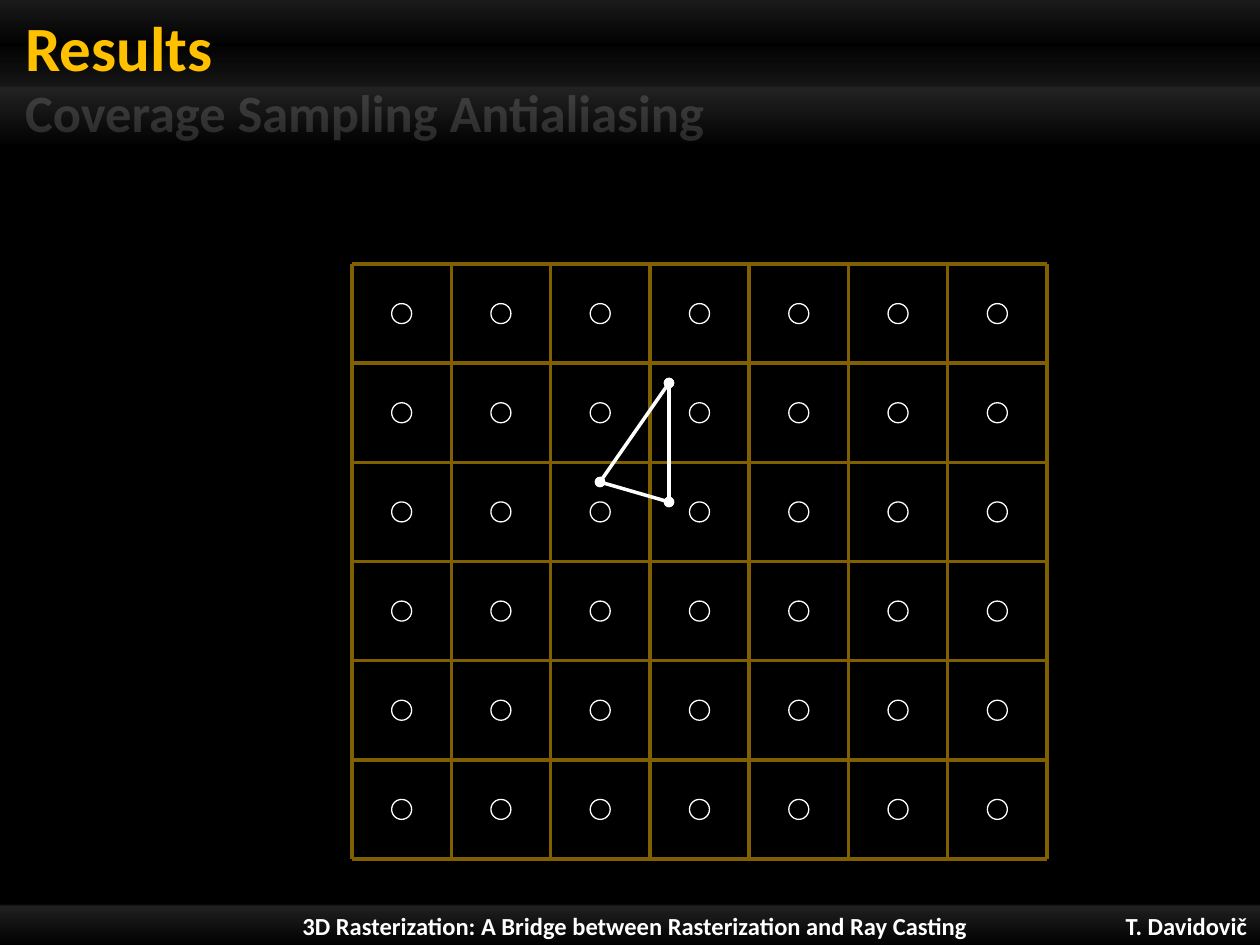
from lxml.etree import SubElement
from pptx import Presentation
from pptx.dml.color import RGBColor
from pptx.enum.shapes import MSO_CONNECTOR, MSO_SHAPE
from pptx.enum.text import MSO_ANCHOR, MSO_AUTO_SIZE, PP_ALIGN
from pptx.oxml.ns import qn
from pptx.util import Pt

WHITE = RGBColor(0xFF, 0xFF, 0xFF)
BLACK = RGBColor(0, 0, 0)
GOLD = RGBColor(0xFF, 0xC0, 0x00)
BROWN = RGBColor(0x80, 0x60, 0x00)
FONT = "Calibri"

# Content: boxes are left, top, width, height in px
TITLE = "Results"
TOPIC = "Coverage Sampling Antialiasing"
FOOTER = [
    ("T. Davidovič", (1027, 906, 233, 39), PP_ALIGN.RIGHT),
    ("3D Rasterization: A Bridge between Rasterization and Ray Casting",
     (176, 904, 918, 43), PP_ALIGN.CENTER),
]
# Bands: box, then stops of white as (position %, opacity %)
BANDS = [
    ((0, 902, 1260, 43), [(5, 0), (10, 8), (11, 13), (100, 0)]),
    ((0, 0, 1260, 144), [(0, 10), (31, 0), (60, 8), (61, 13), (100, 0)]),
]
COLS, ROWS = 7, 6
LEFT, TOP, WIDTH, HEIGHT = 352, 264, 695, 595
DOT = 20
CORNERS = [(669, 383), (600, 482), (669, 502)]


def px(n):
    return round(n * 914400 / 126)


def place(shape, box):
    shape.left, shape.top, shape.width, shape.height = map(px, box)


def write(shape, text, size, color, align, anchor, left=13, right=13):
    frame = shape.text_frame
    frame.auto_size = MSO_AUTO_SIZE.NONE
    frame.word_wrap = True
    frame.vertical_anchor = anchor
    frame.margin_left, frame.margin_right = px(left), px(right)
    frame.margin_top = frame.margin_bottom = 0
    para = frame.paragraphs[0]
    para.alignment = align
    para.space_before = Pt(0)
    run = para.add_run()
    run.text = text
    font = run.font
    font.name, font.size, font.bold = FONT, Pt(size), True
    font.color.rgb = color
    return para, run


def add_line(start, end, color, ends=False):
    line = slide.shapes.add_connector(
        MSO_CONNECTOR.STRAIGHT, *map(px, (*start, *end)))
    line.line.color.rgb = color
    line.line.width = Pt(2)
    if ends:
        for tag in ("a:headEnd", "a:tailEnd"):
            SubElement(line.line._get_or_add_ln(), qn(tag), type="oval")
    SubElement(line._element.spPr, qn("a:effectLst"))


def add_band(box, stops):
    band = slide.shapes.add_shape(MSO_SHAPE.RECTANGLE, *map(px, box))
    band.shadow.inherit = False
    band.line.fill.background()
    band.fill.gradient()
    band.fill.gradient_angle = 270
    items = band._element.spPr.find(qn("a:gradFill")).find(qn("a:gsLst"))
    for old in list(items):
        items.remove(old)
    for pos, alpha in stops:
        stop = SubElement(items, qn("a:gs"), pos=str(pos * 1000))
        tone = SubElement(stop, qn("a:srgbClr"), val=str(WHITE))
        SubElement(tone, qn("a:alpha"), val=str(alpha * 1000))
    # Behind the placeholders
    slide.shapes._spTree.insert(2, band._element)


deck = Presentation()
deck.slide_width, deck.slide_height = px(1260), px(945)
slide = deck.slides.add_slide(deck.slide_layouts[1])
slide.background.fill.solid()
slide.background.fill.fore_color.rgb = BLACK

for box, stops in BANDS:
    add_band(box, stops)

# Title and faded topic
title, body = slide.placeholders
place(title, (0, 0, 1037, 84))
write(title, TITLE, 36, GOLD, PP_ALIGN.LEFT, MSO_ANCHOR.BOTTOM, left=25)
place(body, (0, 82, 845, 59))
para, run = write(body, TOPIC, 30, WHITE, PP_ALIGN.LEFT, MSO_ANCHOR.MIDDLE,
                  left=16)
props = para._p.get_or_add_pPr()
props.set("marL", str(px(62)))
props.set("indent", str(px(-53)))
SubElement(props, qn("a:buNone"))
tone = run._r.rPr.find(qn("a:solidFill"))[0]
SubElement(tone, qn("a:alpha"), val="15000")

# Footer
for text, box, align in FOOTER:
    label = slide.shapes.add_textbox(*map(px, box))
    write(label, text, 14, WHITE, align, MSO_ANCHOR.MIDDLE)

# Pixel grid
wide, high = WIDTH / COLS, HEIGHT / ROWS
for row in range(ROWS + 1):
    y = TOP + row * high
    add_line((LEFT, y), (LEFT + WIDTH, y), BROWN)
for col in range(COLS + 1):
    x = LEFT + col * wide
    add_line((x, TOP), (x, TOP + HEIGHT), BROWN)

# Sample at the centre of each cell
for col in range(COLS):
    for row in range(ROWS):
        x = LEFT + (col + 0.5) * wide - DOT / 2
        y = TOP + (row + 0.5) * high - DOT / 2
        ring = slide.shapes.add_shape(
            MSO_SHAPE.OVAL, *map(px, (x, y, DOT, DOT)))
        ring.shadow.inherit = False
        ring.fill.background()
        ring.line.color.rgb = WHITE
        ring.line.width = Pt(0.75)

# Triangle
for start, end in zip(CORNERS, CORNERS[1:] + CORNERS[:1]):
    add_line(start, end, WHITE, ends=True)

deck.save("out.pptx")
